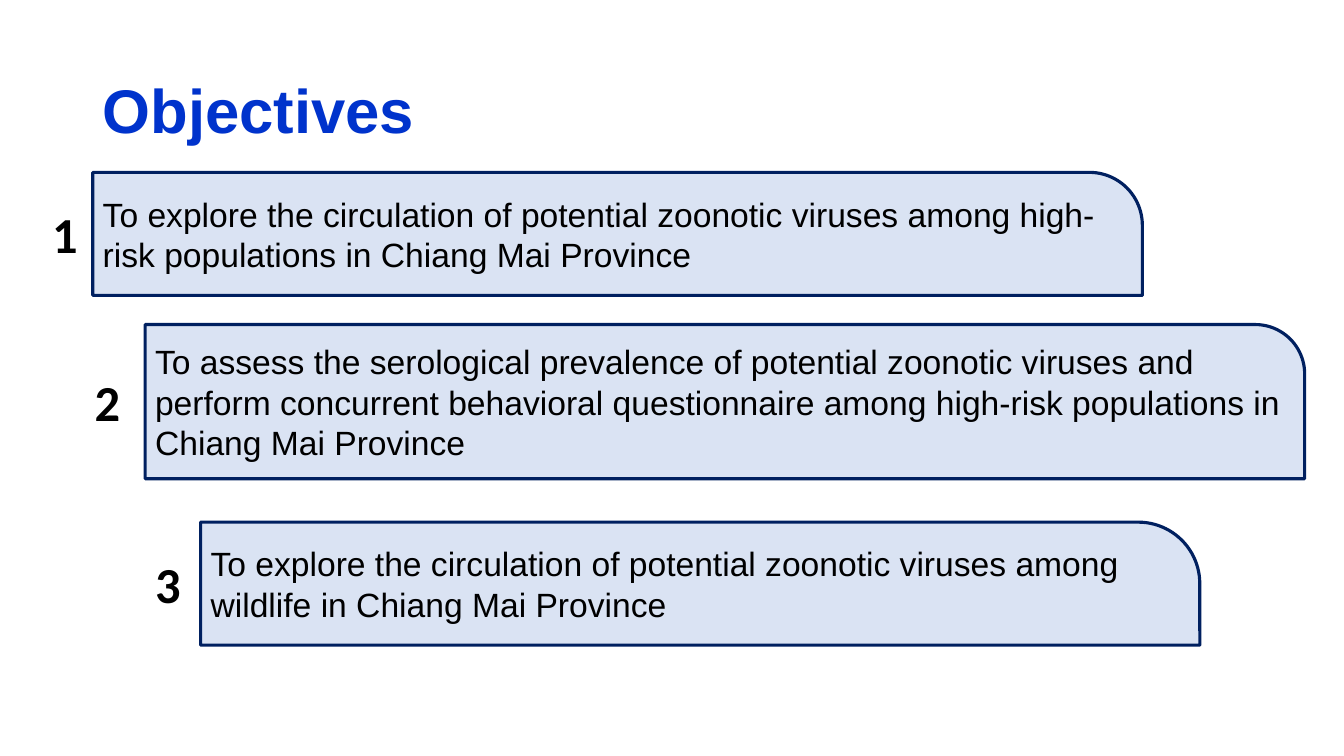
from pptx import Presentation
from pptx.dml.color import RGBColor
from pptx.enum.shapes import MSO_SHAPE
from pptx.enum.text import MSO_ANCHOR, MSO_AUTO_SIZE, PP_ALIGN
from pptx.util import Inches, Pt

COLORS = {
    "title": "0033CC",
    "text": "000000",
    "panel": "DAE3F3",
    "border": "002060",
}

OBJECTIVES = [
    ("To explore the circulation of potential zoonotic viruses among "
     "high-risk populations in Chiang Mai Province",
     (0.92, 1.71, 10.41, 1.22), 0.43, (0.42, 1.97)),
    ("To assess the serological prevalence of potential zoonotic viruses and "
     "perform concurrent behavioral questionnaire among high-risk populations "
     "in Chiang Mai Province",
     (1.44, 3.22, 11.5, 1.53), 0.32, (0.84, 3.63)),
    ("To explore the circulation of potential zoonotic viruses among "
     "wildlife in Chiang Mai Province",
     (1.99, 5.18, 9.91, 1.22), 0.5, (1.44, 5.44)),
]


def color(name):
    return RGBColor.from_string(COLORS[name])


def write_text(shape, text, size, font_name, color_name, bold=False):
    text_frame = shape.text_frame
    text_frame.word_wrap = True
    text_frame.text = text
    paragraph = text_frame.paragraphs[0]
    paragraph.alignment = PP_ALIGN.LEFT
    font = paragraph.runs[0].font
    font.size = Pt(size)
    font.name = font_name
    font.bold = bold
    font.color.rgb = color(color_name)


def add_title(slide, text):
    shape = slide.shapes.add_textbox(
        Inches(0.92), Inches(0.4), Inches(11.5), Inches(1.45))
    write_text(shape, text, 44, "Arial", "title", bold=True)
    shape.text_frame.vertical_anchor = MSO_ANCHOR.MIDDLE
    shape.text_frame.paragraphs[0].line_spacing = 0.9


def add_panel(slide, text, bounds, corner):
    shape = slide.shapes.add_shape(
        MSO_SHAPE.ROUND_1_RECTANGLE, *map(Inches, bounds))
    shape.adjustments[0] = corner
    shape.shadow.inherit = False
    shape.fill.solid()
    shape.fill.fore_color.rgb = color("panel")
    shape.line.color.rgb = color("border")
    shape.line.width = Pt(2.25)
    write_text(shape, text, 24, "Arial", "text")
    shape.text_frame.vertical_anchor = MSO_ANCHOR.MIDDLE


def add_number(slide, number, position):
    shape = slide.shapes.add_textbox(
        *map(Inches, position), Inches(0.27), Inches(0.71))
    write_text(shape, str(number), 36, "Calibri", "text", bold=True)
    shape.text_frame.auto_size = MSO_AUTO_SIZE.SHAPE_TO_FIT_TEXT


def main():
    presentation = Presentation()
    presentation.slide_width = Inches(13.33)
    presentation.slide_height = Inches(7.5)
    slide = presentation.slides.add_slide(presentation.slide_layouts[6])
    add_title(slide, "Objectives")
    for number, (text, bounds, corner, position) in enumerate(OBJECTIVES, 1):
        add_panel(slide, text, bounds, corner)
        add_number(slide, number, position)
    presentation.save("out.pptx")


if __name__ == "__main__":
    main()
